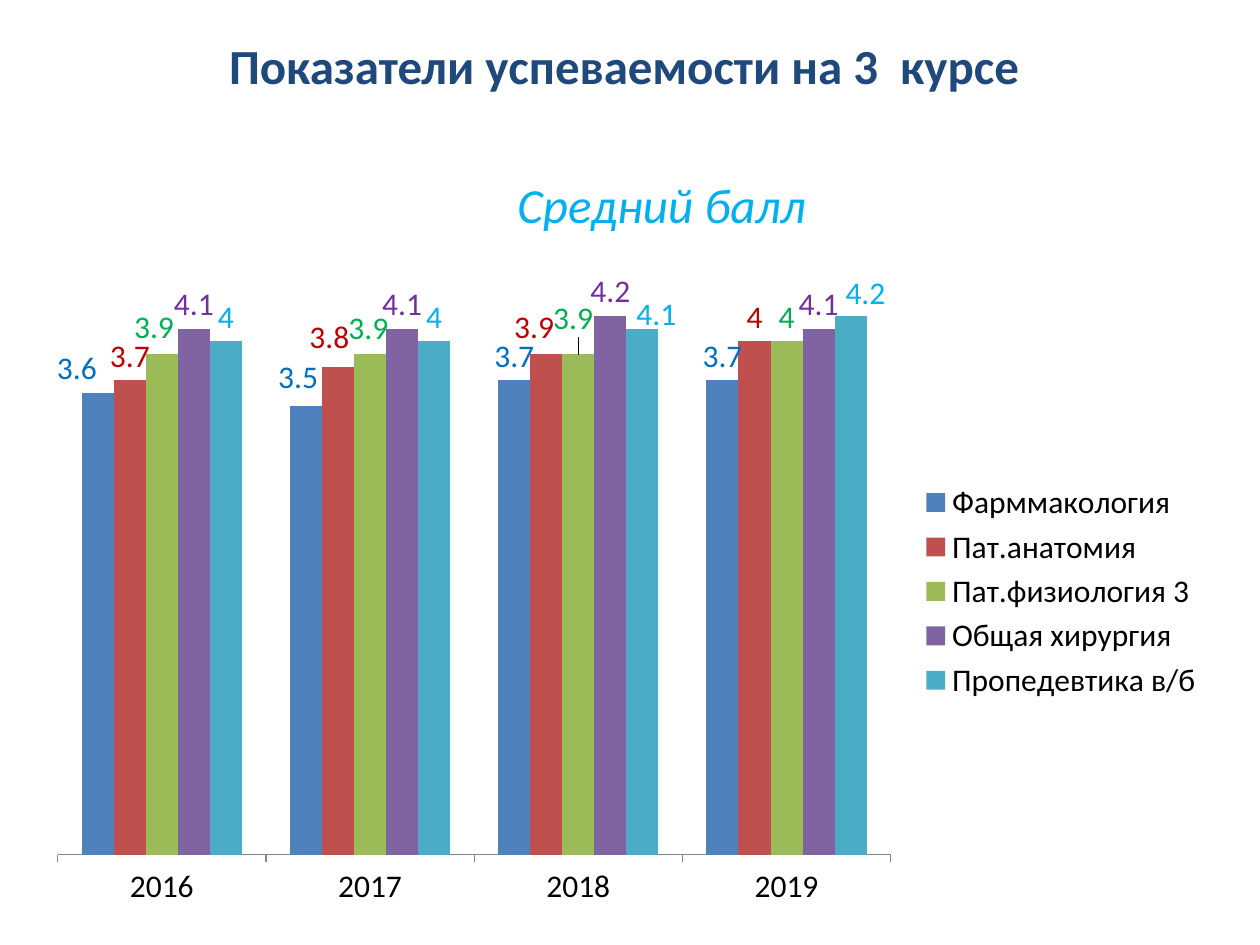
from dataclasses import dataclass, field

from lxml.etree import SubElement
from pptx import Presentation
from pptx.chart.chart import Chart
from pptx.chart.data import CategoryChartData
from pptx.chart.series import BarSeries
from pptx.dml.color import RGBColor
from pptx.enum.chart import (XL_CHART_TYPE, XL_LABEL_POSITION, XL_LEGEND_POSITION,
                             XL_TICK_LABEL_POSITION, XL_TICK_MARK)
from pptx.enum.text import MSO_ANCHOR, PP_ALIGN
from pptx.oxml.ns import qn
from pptx.slide import Slide
from pptx.util import Pt


@dataclass(frozen=True)
class Theme:
    font: str = "Calibri"
    heading_size: int = 28
    chart_size: int = 18
    title: str = "1F497D"
    subtitle: str = "00B0F0"
    text: str = "000000"
    axis: str = "868686"


@dataclass(frozen=True)
class Frame:
    left: float
    top: float
    width: float
    height: float


@dataclass(frozen=True)
class Heading:
    text: str
    frame: Frame
    color: str
    bold: bool = False
    italic: bool = False


@dataclass(frozen=True)
class Subject:
    name: str
    scores: tuple[float, ...]
    fill: str
    label_color: str
    label_shifts: dict[int, tuple[float, float]] = field(default_factory=dict)


THEME = Theme()
YEARS = ("2016", "2017", "2018", "2019")
CHART_FRAME = Frame(20, 150.5, 675, 375)
PLOT_FRAME = Frame(13, 8, 476, 330)
SUBTITLE = Heading("Средний балл", Frame(54, 96.5, 648, 40), THEME.subtitle, italic=True)
TITLE = Heading("Показатели успеваемости на 3  курсе", Frame(15, 8, 683, 58),
                THEME.title, bold=True)
SUBJECTS = (
    Subject("Фарммакология", (3.6, 3.5, 3.7, 3.7), "4F81BD", "0070C0",
            {0: (-12, 0), 1: (-4.5, -2.5)}),
    Subject("Пат.анатомия", (3.7, 3.8, 3.9, 4), "C0504D", "C00000",
            {1: (-5, -3.5), 2: (-7, -1.5)}),
    Subject("Пат.физиология 3", (3.9, 3.9, 3.9, 4), "9BBB59", "00B050",
            {0: (-4.5, -1.5), 1: (-1, -1), 2: (-3, -7)}),
    Subject("Общая хирургия", (4.1, 4.1, 4.2, 4.1), "8064A2", "7030A0"),
    Subject("Пропедевтика в/б", (4, 4, 4.1, 4.2), "4BACC6", "00B0F0",
            {2: (8, 5.5), 3: (8.5, 1)}),
)


def style_font(font, size: int, color: str) -> None:
    font.name = THEME.font
    font.size = Pt(size)
    font.color.rgb = RGBColor.from_string(color)


def add_heading(page: Slide, heading: Heading) -> None:
    frame = heading.frame
    box = page.shapes.add_textbox(Pt(frame.left), Pt(frame.top),
                                  Pt(frame.width), Pt(frame.height))
    box.text_frame.word_wrap = True
    box.text_frame.vertical_anchor = MSO_ANCHOR.MIDDLE
    para = box.text_frame.paragraphs[0]
    para.alignment = PP_ALIGN.CENTER
    span = para.add_run()
    span.text = heading.text
    style_font(span.font, THEME.heading_size, heading.color)
    span.font.bold = heading.bold
    span.font.italic = heading.italic


def fill_layout(layout, settings: dict[str, object]) -> None:
    manual = SubElement(layout, qn("c:manualLayout"))
    for tag, value in settings.items():
        SubElement(manual, qn(f"c:{tag}")).set("val", str(value))


def place_plot(chart: Chart) -> None:
    area = chart._chartSpace.chart.plotArea
    for old in area.findall(qn("c:layout")):
        area.remove(old)
    layout = SubElement(area, qn("c:layout"))
    area.insert(0, layout)
    fill_layout(layout, {
        "layoutTarget": "inner", "xMode": "edge", "yMode": "edge",
        "x": PLOT_FRAME.left / CHART_FRAME.width,
        "y": PLOT_FRAME.top / CHART_FRAME.height,
        "w": PLOT_FRAME.width / CHART_FRAME.width,
        "h": PLOT_FRAME.height / CHART_FRAME.height,
    })


def style_series(series: BarSeries, subject: Subject) -> None:
    series.format.fill.solid()
    series.format.fill.fore_color.rgb = RGBColor.from_string(subject.fill)
    series.invert_if_negative = False
    labels = series.data_labels
    labels.show_value = True
    labels.position = XL_LABEL_POSITION.OUTSIDE_END
    style_font(labels.font, THEME.chart_size, subject.label_color)
    for index, (across, down) in subject.label_shifts.items():
        label = series.points[index].data_label
        label.position = XL_LABEL_POSITION.OUTSIDE_END
        style_font(label.font, THEME.chart_size, subject.label_color)
        element = labels._element.xpath(f"c:dLbl[c:idx/@val='{index}']")[0]
        layout = SubElement(element, qn("c:layout"))
        element.insert(1, layout)
        fill_layout(layout, {"x": across / CHART_FRAME.width,
                             "y": down / CHART_FRAME.height})


def add_score_chart(page: Slide) -> None:
    data = CategoryChartData()
    data.categories = YEARS
    for subject in SUBJECTS:
        data.add_series(subject.name, subject.scores)
    chart = page.shapes.add_chart(
        XL_CHART_TYPE.COLUMN_CLUSTERED, Pt(CHART_FRAME.left), Pt(CHART_FRAME.top),
        Pt(CHART_FRAME.width), Pt(CHART_FRAME.height), data).chart
    style_font(chart.font, THEME.chart_size, THEME.text)
    chart.has_title = False
    chart.has_legend = True
    chart.legend.position = XL_LEGEND_POSITION.RIGHT
    chart.legend.include_in_layout = False

    scores = chart.value_axis
    scores.minimum_scale = 0
    scores.maximum_scale = 4.5
    scores.has_major_gridlines = False
    scores.visible = False
    years = chart.category_axis
    years.major_tick_mark = XL_TICK_MARK.OUTSIDE
    years.tick_label_position = XL_TICK_LABEL_POSITION.NEXT_TO_AXIS
    years.format.line.color.rgb = RGBColor.from_string(THEME.axis)
    years.format.line.width = Pt(0.75)

    plot = chart.plots[0]
    plot.gap_width = 150
    plot.overlap = 0
    plot.vary_by_categories = False
    for series, subject in zip(plot.series, SUBJECTS):
        style_series(series, subject)
    place_plot(chart)


def main() -> None:
    deck = Presentation()
    deck.slide_width = Pt(720)
    deck.slide_height = Pt(540)
    page = deck.slides.add_slide(deck.slide_layouts[6])
    add_heading(page, SUBTITLE)
    add_score_chart(page)
    add_heading(page, TITLE)
    deck.save("out.pptx")


if __name__ == "__main__":
    main()
